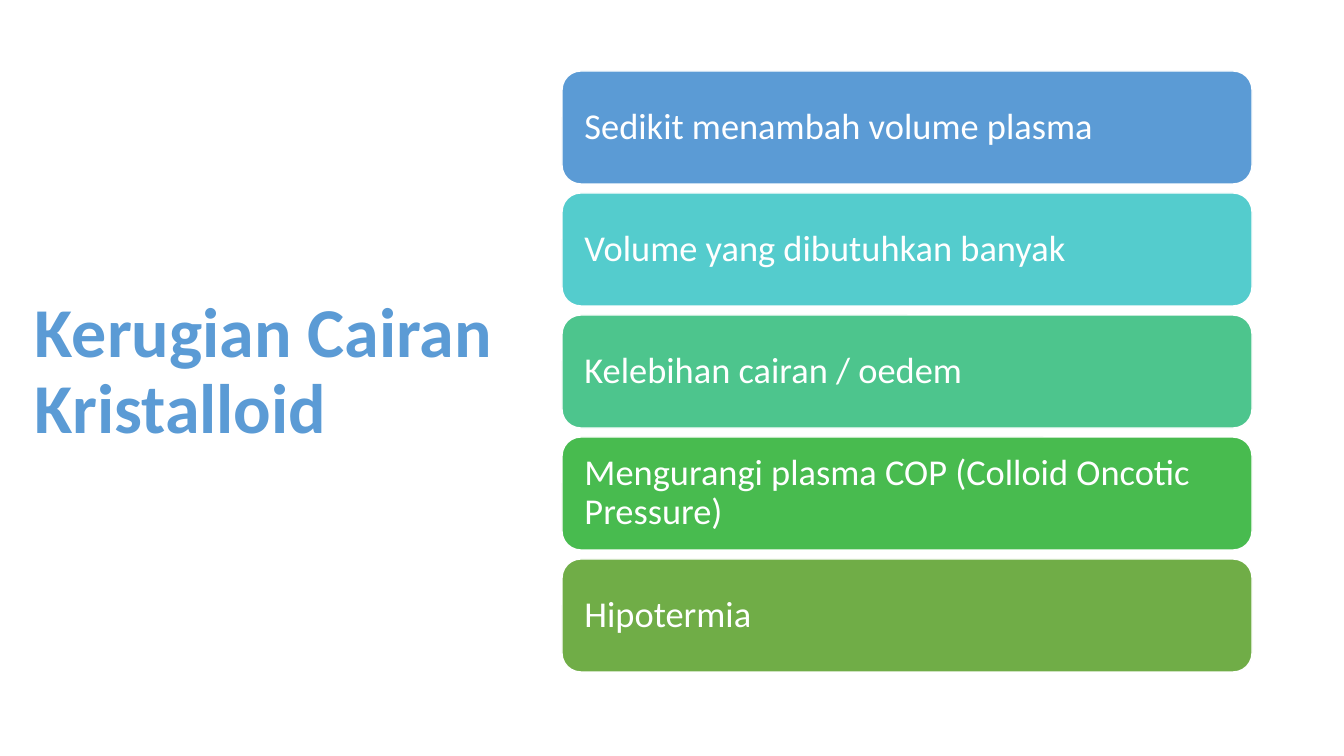
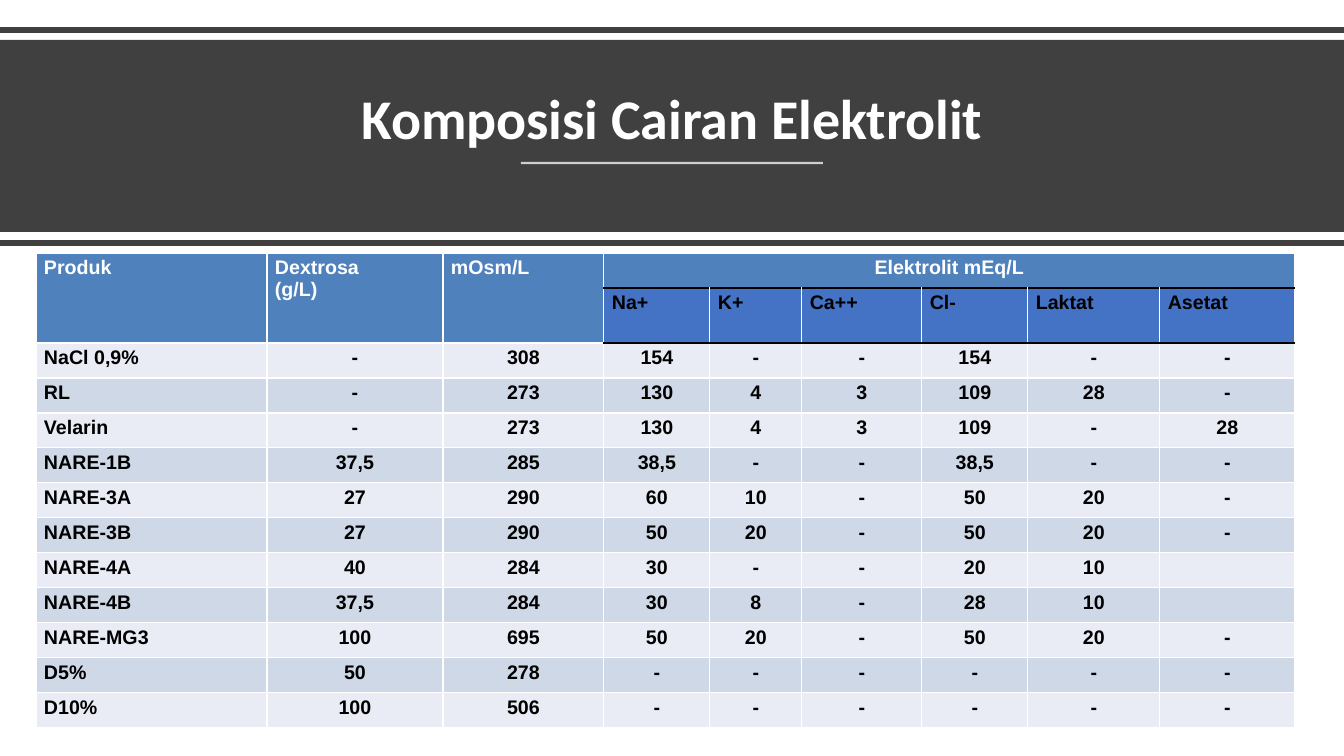
from lxml import etree
from pptx import Presentation
from pptx import util as u
from pptx.dml.color import RGBColor
from pptx.enum import shapes, text
from pptx.oxml import ns

PX = 12192000 / 1344
WIDTH, HEIGHT = 1344, 756

COLORS = {
    "white": "FFFFFF",
    "black": "000000",
    "blue": "5B9BD5",
    "band": "404040",
    "head": "4F81BD",
    "subhead": "4472C4",
    "odd": "E9ECF4",
    "even": "CFD8E7",
}
TITLE = {"name": "Calibri", "bold": True}
CARD = {"name": "Calibri", "size": u.Pt(26)}
CELL = {"name": "Arial", "size": u.Pt(14), "bold": True}
LEFT, CENTER = text.PP_ALIGN.LEFT, text.PP_ALIGN.CENTER

CARDS = [
    ("Sedikit menambah volume plasma", "5B9BD5"),
    ("Volume yang dibutuhkan banyak", "54CCCD"),
    ("Kelebihan cairan / oedem", "4DC58D"),
    ("Mengurangi plasma COP (Colloid Oncotic Pressure)", "48BB4F"),
    ("Hipotermia", "70AD47"),
]

COLUMNS = [231, 176, 161, 106, 92, 120, 106, 132, 135]
ROW, SUBHEAD_ROW = 35, 52
FIRST_ION = 3
FLUIDS = [
    ["Produk", "Dextrosa\v(g/L)", "mOsm/L", "Elektrolit mEq/L", "", "", "", "", ""],
    ["", "", "", "Na+", "K+", "Ca++", "Cl-", "Laktat", "Asetat"],
    ["NaCl 0,9%", "-", "308", "154", "-", "-", "154", "-", "-"],
    ["RL", "-", "273", "130", "4", "3", "109", "28", "-"],
    ["Velarin", "-", "273", "130", "4", "3", "109", "-", "28"],
    ["NARE-1B", "37,5", "285", "38,5", "-", "-", "38,5", "-", "-"],
    ["NARE-3A", "27", "290", "60", "10", "-", "50", "20", "-"],
    ["NARE-3B", "27", "290", "50", "20", "-", "50", "20", "-"],
    ["NARE-4A", "40", "284", "30", "-", "-", "20", "10", ""],
    ["NARE-4B", "37,5", "284", "30", "8", "-", "28", "10", ""],
    ["NARE-MG3", "100", "695", "50", "20", "-", "50", "20", "-"],
    ["D5%", "50", "278", "-", "-", "-", "-", "-", "-"],
    ["D10%", "100", "506", "-", "-", "-", "-", "-", "-"],
]


def px(*lengths):
    return [u.Emu(round(n * PX)) for n in lengths]


def rgb(color):
    return RGBColor.from_string(COLORS.get(color, color))


def apply(target, values):
    for key, value in values.items():
        setattr(target, key, value)


def write(tf, words, font, color, align=LEFT, spacing=None):
    p = tf.paragraphs[0]
    p.text = words
    apply(p, {"alignment": align, "line_spacing": spacing})
    for r in p.runs:
        apply(r.font, font)
        r.font.color.rgb = rgb(color)
    if not words:
        size = str(int(font["size"].pt * 100))
        etree.SubElement(p._p, ns.qn("a:endParaRPr"), sz=size)


def add_title(s, box, words, size, color, anchor, align=LEFT):
    tf = s.shapes.add_textbox(*px(*box)).text_frame
    apply(tf, {"word_wrap": True, "vertical_anchor": anchor})
    write(tf, words, {**TITLE, "size": u.Pt(size)}, color, align, 0.9)


def add_block(s, kind, box, color, outline=None):
    sp = s.shapes.add_shape(kind, *px(*box))
    sp.shadow.inherit = False
    sp.fill.solid()
    sp.fill.fore_color.rgb = rgb(color)
    if outline:
        sp.line.color.rgb = rgb(outline)
        sp.line.width = u.Pt(1)
    else:
        sp.line.fill.background()
    return sp


def add_card(s, box, words, color):
    sp = add_block(s, shapes.MSO_SHAPE.ROUNDED_RECTANGLE, box, color, "white")
    inset = px(17)[0]
    apply(sp.text_frame, {
        "word_wrap": True,
        "vertical_anchor": text.MSO_ANCHOR.MIDDLE,
        "margin_left": inset,
        "margin_right": inset,
    })
    write(sp.text_frame, words, CARD, "white", spacing=0.9)


def add_rule(s, left, right, y, color, width, opacity=100):
    cx = s.shapes.add_connector(shapes.MSO_CONNECTOR.STRAIGHT, *px(left, y, right, y))
    cx.line.color.rgb = rgb(color)
    cx.line.width = u.Pt(width)
    etree.SubElement(cx._element.spPr, ns.qn("a:effectLst"))
    if opacity < 100:
        clr = cx._element.find(".//" + ns.qn("a:srgbClr"))
        etree.SubElement(clr, ns.qn("a:alpha"), val=str(opacity * 1000))


def set_borders(cell, **sides):
    tc_pr = cell._tc.get_or_add_tcPr()
    for i, side in enumerate("LRTB"):
        ln = etree.Element(ns.qn("a:ln" + side), w=str(u.Pt(1)))
        fill = etree.SubElement(ln, ns.qn("a:solidFill"))
        etree.SubElement(fill, ns.qn("a:srgbClr"), val=COLORS[sides.get(side, "white")])
        tc_pr.insert(i, ln)


def cell_style(row, col):
    ion = col >= FIRST_ION
    if row == 0 or (row == 1 and not ion):
        return "head", "white", CENTER if ion else LEFT
    if row == 1:
        return "subhead", "black", LEFT
    return "even" if row % 2 else "odd", "black", CENTER if col else LEFT


def fill_cell(cell, row, col, words):
    fill, color, align = cell_style(row, col)
    cell.fill.solid()
    cell.fill.fore_color.rgb = rgb(fill)
    side, edge = px(8, 4)
    apply(cell, {"margin_left": side, "margin_right": side,
                 "margin_top": edge, "margin_bottom": edge})
    write(cell.text_frame, words, CELL, color, align)
    borders = {}
    if col >= FIRST_ION:
        if row in (1, 2):
            borders["T"] = "black"
        if row in (0, 1):
            borders["B"] = "black"
    set_borders(cell, **borders)


def add_fluid_table(s, left, top):
    heights = [SUBHEAD_ROW if i == 1 else ROW for i in range(len(FLUIDS))]
    box = px(left, top, sum(COLUMNS), sum(heights))
    table = s.shapes.add_table(len(FLUIDS), len(COLUMNS), *box).table
    apply(table, {"first_row": False, "horz_banding": False})
    for column, width in zip(table.columns, px(*COLUMNS)):
        column.width = width
    for row, height in zip(table.rows, px(*heights)):
        row.height = height
    for i, values in enumerate(FLUIDS):
        for j, words in enumerate(values):
            fill_cell(table.cell(i, j), i, j, words)
    for j in range(FIRST_ION):
        table.cell(0, j).merge(table.cell(1, j))
    table.cell(0, FIRST_ION).merge(table.cell(0, len(COLUMNS) - 1))


def build_drawbacks(s):
    add_title(s, (25, 69, 492, 607), "Kerugian Cairan Kristalloid", 50, "blue",
              text.MSO_ANCHOR.MIDDLE)
    for i, (words, color) in enumerate(CARDS):
        add_card(s, (562, 71 + 122 * i, 690, 113), words, color)


def build_composition(s):
    add_block(s, shapes.MSO_SHAPE.RECTANGLE, (0, 40, WIDTH, 192), "band")
    for y in (30, 243):
        add_rule(s, 0, WIDTH, y, "band", 4)
    add_title(s, (58, 54, 1228, 103), "Komposisi Cairan Elektrolit", 40, "white",
              text.MSO_ANCHOR.BOTTOM, CENTER)
    add_rule(s, 521, 823, 163, "white", 1.5, 75)
    add_fluid_table(s, 36, 253)


def main():
    prs = Presentation()
    prs.slide_width, prs.slide_height = px(WIDTH, HEIGHT)
    for build in (build_drawbacks, build_composition):
        build(prs.slides.add_slide(prs.slide_layouts[6]))
    prs.save("out.pptx")


if __name__ == "__main__":
    main()
